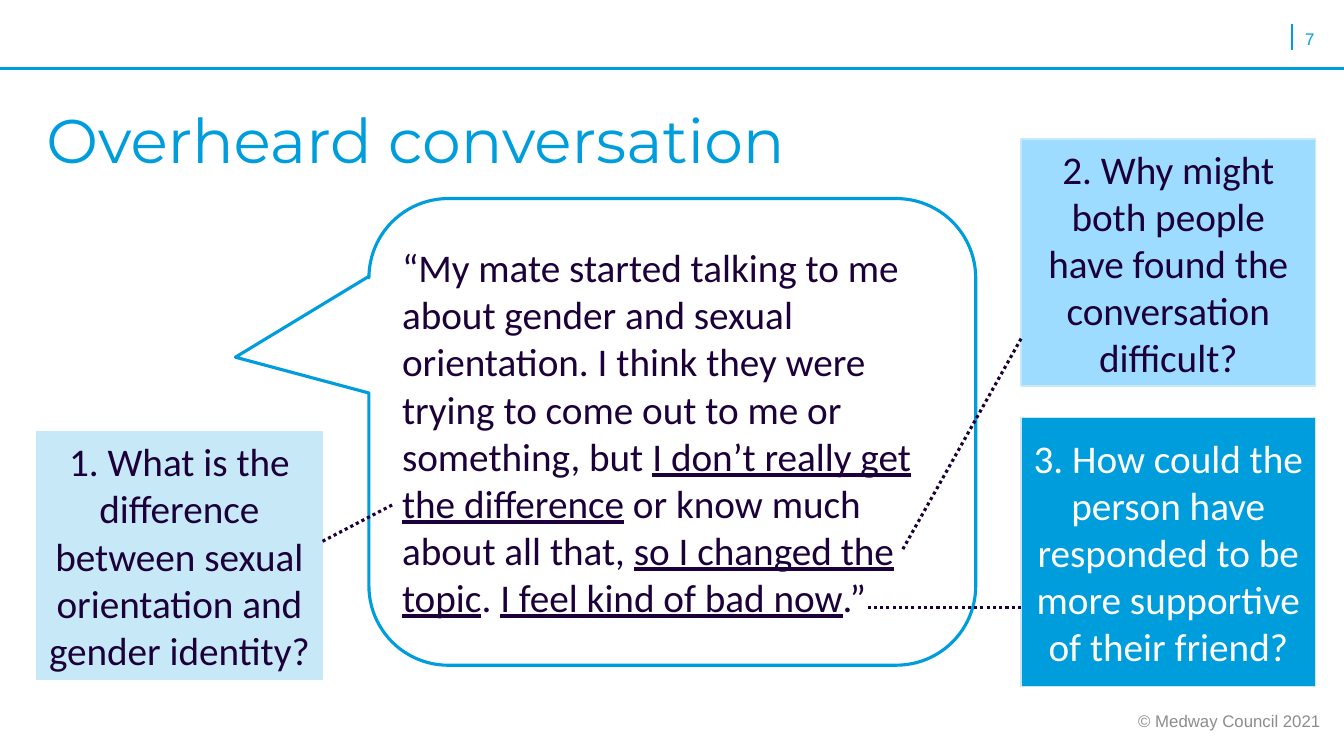
"""Build the "Overheard conversation" discussion slide."""
from dataclasses import dataclass

from pptx import Presentation
from pptx.dml.color import RGBColor
from pptx.enum.dml import MSO_LINE
from pptx.enum.shapes import MSO_CONNECTOR, MSO_SHAPE
from pptx.enum.text import MSO_ANCHOR, MSO_AUTO_SIZE, PP_ALIGN
from pptx.oxml.xmlchemy import OxmlElement
from pptx.util import Emu, Inches, Pt


@dataclass(frozen=True)
class Theme:
    """Colours, fonts, type sizes and line widths."""
    blue: str = "009DDC"
    ink: str = "1C0039"
    pale: str = "C7E9F7"
    sky: str = "9DDCFF"
    white: str = "FFFFFF"
    grey: str = "8C8C8C"
    heading: str = "Montserrat"
    body: str = "Calibri"
    small: str = "Arial"
    title_size: int = 44
    body_size: int = 28
    small_size: int = 12
    edge: float = 1
    marker: float = 1.5
    rule: float = 2.25


THEME = Theme()
WIDTH, HEIGHT = Emu(12192000), Inches(7.5)
COLUMNS, ROWS = 160, 90

QUOTE = [
    ("“My mate started talking to me about gender and sexual orientation. "
     "I think they were trying to come out to me or something, but ", False),
    ("I don’t really get the difference", True),
    (" or know much about all that, ", False),
    ("so I changed the topic", True),
    (". ", False),
    ("I feel kind of bad now", True),
    (".”", False),
]
QUESTIONS = [
    ("1. What is the difference between sexual orientation and gender identity?",
     (4.32, 51.36, 34.08, 29.52), THEME.pale, THEME.ink, (38.4, 64.44), (46.68, 60.12)),
    ("2. Why might both people have found the conversation difficult?",
     (121.56, 16.56, 35.04, 29.4), THEME.sky, THEME.ink, (121.56, 40.32), (107.4, 65.52)),
    ("3. How could the person have responded to be more supportive of their friend?",
     (121.56, 49.68, 35.04, 32.04), THEME.blue, THEME.white, (121.56, 72.36), (103.32, 72.36)),
]


def grid(*cells):
    """Turn alternating column and row counts into slide lengths."""
    return [Emu(round(cell * (HEIGHT / ROWS if i % 2 else WIDTH / COLUMNS)))
            for i, cell in enumerate(cells)]


def write(frame, pieces, *, font=THEME.body, size=THEME.body_size, color=THEME.ink,
          align=PP_ALIGN.LEFT, anchor=MSO_ANCHOR.MIDDLE, spacing=1.0):
    """Fill a text frame with one paragraph of (text, underlined) pieces."""
    frame.word_wrap = True
    frame.auto_size = MSO_AUTO_SIZE.NONE
    frame.vertical_anchor = anchor
    paragraph = frame.paragraphs[0]
    paragraph.alignment = align
    paragraph.line_spacing = spacing
    for text, underlined in [(pieces, False)] if isinstance(pieces, str) else pieces:
        run = paragraph.add_run()
        run.text = text
        run.font.name = font
        run.font.size = Pt(size)
        run.font.color.rgb = RGBColor.from_string(color)
        if underlined:
            run.font.underline = True


def add_line(slide, start, end, *, color=THEME.blue, width=THEME.rule, dash=None):
    """Draw a straight line between two grid points."""
    line = slide.shapes.add_connector(MSO_CONNECTOR.STRAIGHT, *grid(*start, *end))
    line.line.color.rgb = RGBColor.from_string(color)
    line.line.width = Pt(width)
    if dash:
        line.line.dash_style = dash
    line._element.spPr.append(OxmlElement("a:effectLst"))


def add_panel(slide, kind, area, pieces, *, edge, width, fill=None, **text_format):
    """Draw an outlined shape holding text and return it."""
    panel = slide.shapes.add_shape(kind, *grid(*area))
    panel.shadow.inherit = False
    if fill:
        panel.fill.solid()
        panel.fill.fore_color.rgb = RGBColor.from_string(fill)
    else:
        panel.fill.background()
    panel.line.color.rgb = RGBColor.from_string(edge)
    panel.line.width = Pt(width)
    write(panel.text_frame, pieces, **text_format)
    return panel


def add_label(slide, area, text, **text_format):
    """Place a small text box."""
    label = slide.shapes.add_textbox(*grid(*area))
    write(label.text_frame, text, font=THEME.small, size=THEME.small_size, **text_format)


def add_title(slide, area, text):
    """Move and format the title placeholder."""
    title = slide.shapes.title
    title.left, title.top, title.width, title.height = grid(*area)
    write(title.text_frame, text, font=THEME.heading, size=THEME.title_size,
          color=THEME.blue, anchor=MSO_ANCHOR.TOP, spacing=0.9)


def add_question(slide, text, area, fill, color, start, end):
    """Add a question card and the dotted link to its phrase."""
    add_panel(slide, MSO_SHAPE.RECTANGLE, area, text, edge=THEME.pale, width=THEME.edge,
              fill=fill, color=color, align=PP_ALIGN.CENTER)
    add_line(slide, start, end, color=THEME.ink, dash=MSO_LINE.ROUND_DOT)


def main():
    """Assemble and save the slide."""
    deck = Presentation()
    deck.slide_width, deck.slide_height = WIDTH, HEIGHT
    slide = deck.slides.add_slide(deck.slide_layouts[5])

    add_line(slide, (153.84, 2.88), (153.84, 6), width=THEME.marker)
    add_line(slide, (0, 8.16), (COLUMNS, 8.16))
    add_title(slide, (4.32, 12.48, 138, 17.4), "Overheard conversation")
    add_label(slide, (154.2, 2.88, 5.04, 3.12), "7", color=THEME.blue, anchor=MSO_ANCHOR.TOP)
    add_label(slide, (130.32, 83.4, 28.08, 4.8), "© Medway Council 2021",
              color=THEME.grey, align=PP_ALIGN.RIGHT)

    speech = add_panel(slide, MSO_SHAPE.ROUNDED_RECTANGULAR_CALLOUT,
                       (43.92, 23.64, 72.24, 55.56), QUOTE, edge=THEME.blue, width=THEME.rule)
    for i, adjustment in enumerate((-0.72, -0.16, 0.17)):
        speech.adjustments[i] = adjustment
    for question in QUESTIONS:
        add_question(slide, *question)

    deck.save("out.pptx")


if __name__ == "__main__":
    main()
